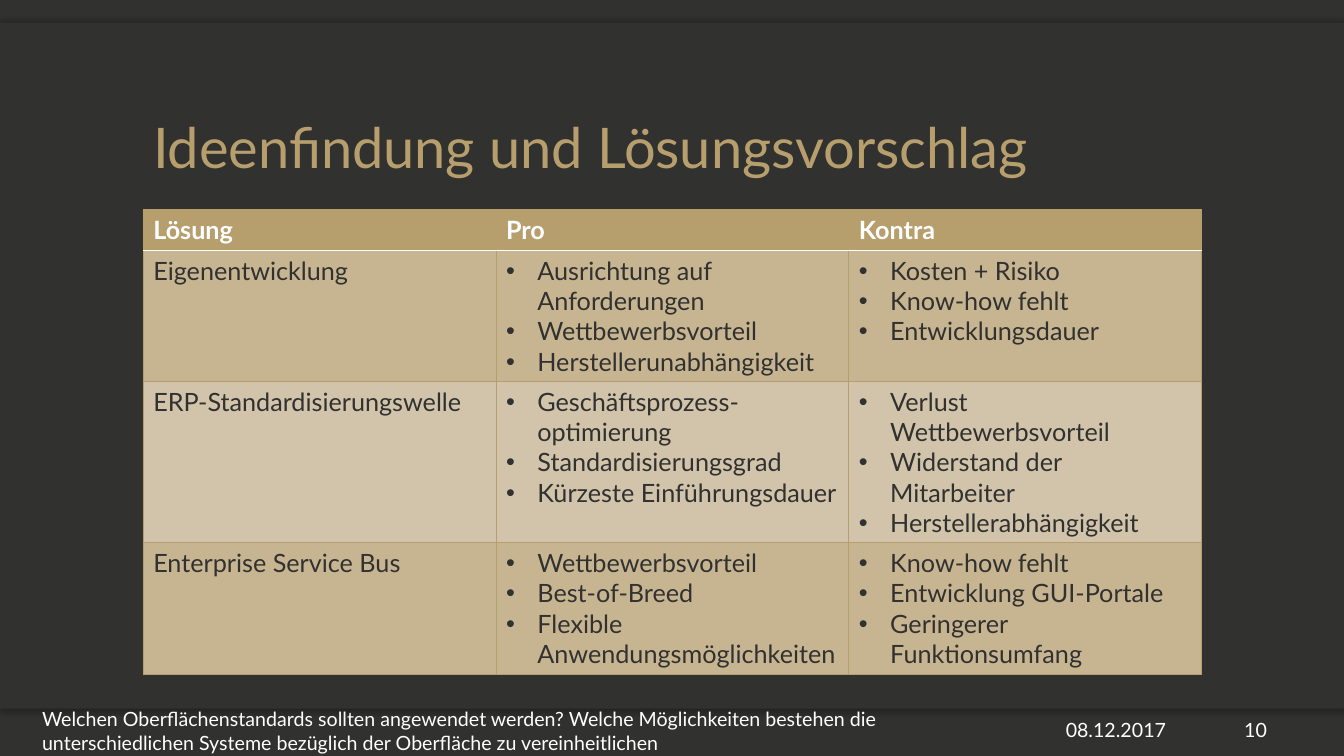
import dataclasses

import lxml.etree
import pptx
import pptx.dml.color
import pptx.enum.shapes
import pptx.enum.text
import pptx.oxml
import pptx.oxml.ns
import pptx.util

Cm = pptx.util.Cm
Anchor = pptx.enum.text.MSO_ANCHOR
Align = pptx.enum.text.PP_ALIGN


@dataclasses.dataclass(frozen=True)
class Theme:
    font: str = "Lato"
    dark: str = "31312F"
    gold: str = "B79E6D"
    band: str = "C7B592"
    plain: str = "D1C4AA"
    white: str = "FFFFFF"
    shadow: str = "000000"
    title_size: int = 40
    table_size: int = 18
    footer_size: int = 14


def rgb(color):
    return pptx.dml.color.RGBColor.from_string(color)


def apply_format(target, values):
    for name, value in values.items():
        setattr(target, name, value)


class SlideBuilder:
    def __init__(self, slide, theme):
        self.slide = slide
        self.theme = theme

    def background(self, color):
        fill = self.slide.background.fill
        fill.solid()
        fill.fore_color.rgb = rgb(color)

    def panel(self, left, top, width, height, shadow_angle=None):
        shape = self.slide.shapes.add_shape(
            pptx.enum.shapes.MSO_SHAPE.RECTANGLE,
            Cm(left), Cm(top), Cm(width), Cm(height))
        shape.shadow.inherit = False
        shape.fill.solid()
        shape.fill.fore_color.rgb = rgb(self.theme.dark)
        shape.line.fill.background()
        if shadow_angle is not None:
            effects = shape._element.spPr.find(pptx.oxml.ns.qn("a:effectLst"))
            effects.append(pptx.oxml.parse_xml(
                f'<a:outerShdw {pptx.oxml.ns.nsdecls("a")} blurRad="{pptx.util.Pt(4)}" '
                f'dist="{pptx.util.Pt(2)}" dir="{shadow_angle * 60000}" rotWithShape="0">'
                f'<a:srgbClr val="{self.theme.shadow}"><a:alpha val="25000"/></a:srgbClr>'
                '</a:outerShdw>'))

    def add_run(self, paragraph, text, size, color, bold=False):
        run = paragraph.add_run()
        run.text = text
        apply_format(run.font, {"name": self.theme.font, "bold": bold,
                                "size": pptx.util.Pt(size)})
        run.font.color.rgb = rgb(color)

    def text(self, box, text, size, color, anchor=Anchor.MIDDLE, **paragraph_format):
        shape = self.slide.shapes.add_textbox(*(Cm(length) for length in box))
        apply_format(shape.text_frame, {"word_wrap": True, "vertical_anchor": anchor})
        paragraph = shape.text_frame.paragraphs[0]
        apply_format(paragraph, paragraph_format)
        self.add_run(paragraph, text, size, color)

    def bullet(self, paragraph):
        properties = paragraph._p.get_or_add_pPr()
        properties.set("marL", str(Cm(0.79)))
        properties.set("indent", str(-Cm(0.79)))
        for tag, name, value in (("a:buFont", "typeface", "Arial"), ("a:buChar", "char", "•")):
            lxml.etree.SubElement(properties, pptx.oxml.ns.qn(tag)).set(name, value)

    def borders(self, cell, row_index):
        properties = cell._tc.get_or_add_tcPr()
        white_side = {0: "B", 1: "T"}.get(row_index)
        for side in "LRTB":
            color, width = (self.theme.white, 1) if side == white_side else (self.theme.gold, 0.5)
            properties.append(pptx.oxml.parse_xml(
                f'<a:ln{side} {pptx.oxml.ns.nsdecls("a")} w="{pptx.util.Pt(width)}">'
                f'<a:solidFill><a:srgbClr val="{color}"/></a:solidFill></a:ln{side}>'))

    def table(self, left, top, column_width, row_heights, rows):
        columns = len(rows[0])
        table = self.slide.shapes.add_table(
            len(rows), columns, Cm(left), Cm(top),
            Cm(column_width * columns), Cm(sum(row_heights))).table
        for column in table.columns:
            column.width = Cm(column_width)
        for row_index, (row, height) in enumerate(zip(rows, row_heights)):
            table.rows[row_index].height = Cm(height)
            header = row_index == 0
            fill = self.theme.gold if header else (self.theme.plain, self.theme.band)[row_index % 2]
            color = self.theme.white if header else self.theme.dark
            for column_index, content in enumerate(row):
                cell = table.cell(row_index, column_index)
                self.borders(cell, row_index)
                cell.fill.solid()
                cell.fill.fore_color.rgb = rgb(fill)
                bulleted = isinstance(content, list)
                for index, line in enumerate(content if bulleted else [content]):
                    frame = cell.text_frame
                    paragraph = frame.add_paragraph() if index else frame.paragraphs[0]
                    if bulleted:
                        self.bullet(paragraph)
                    self.add_run(paragraph, line, self.theme.table_size, color, header)


SOLUTIONS = [
    ["Lösung", "Pro", "Kontra"],
    ["Eigenentwicklung",
     ["Ausrichtung auf Anforderungen", "Wettbewerbsvorteil", "Herstellerunabhängigkeit"],
     ["Kosten + Risiko", "Know-how fehlt", "Entwicklungsdauer"]],
    ["ERP-Standardisierungswelle",
     ["Geschäftsprozess-optimierung", "Standardisierungsgrad", "Kürzeste Einführungsdauer"],
     ["Verlust Wettbewerbsvorteil", "Widerstand der Mitarbeiter", "Herstellerabhängigkeit"]],
    ["Enterprise Service Bus",
     ["Wettbewerbsvorteil", "Best-of-Breed", "Flexible Anwendungsmöglichkeiten"],
     ["Know-how fehlt", "Entwicklung GUI-Portale", "Geringerer Funktionsumfang"]],
]
QUESTION = ("Welchen Oberflächenstandards sollten angewendet werden? Welche Möglichkeiten "
            "bestehen die unterschiedlichen Systeme bezüglich der Oberfläche zu vereinheitlichen")


def main():
    presentation = pptx.Presentation()
    presentation.slide_width = Cm(33.87)
    presentation.slide_height = Cm(19.05)
    theme = Theme()
    builder = SlideBuilder(presentation.slides.add_slide(presentation.slide_layouts[6]), theme)

    # Backdrop: two shadowed strips beneath the main panel
    builder.background(theme.dark)
    builder.panel(0, 16.61, 33.87, 1.24, shadow_angle=90)
    builder.panel(0, 0.58, 33.87, 1.24, shadow_angle=270)
    builder.panel(0, 0.58, 33.87, 17.27)

    # Title
    builder.text((3.61, 1.17, 26.67, 3.51), "Ideenfindung und Lösungsvorschlag",
                 theme.title_size, theme.gold, Anchor.BOTTOM, line_spacing=0.9)

    # Footer
    for box, text, alignment in (
            ((25.93, 18.01, 3.71, 0.76), "08.12.2017", Align.RIGHT),
            ((0.81, 17.78, 23.16, 1.27), QUESTION, Align.LEFT),
            ((30.28, 18.01, 1.9, 0.76), "10", Align.RIGHT)):
        builder.text(box, text, theme.footer_size, theme.white, alignment=alignment)

    # Comparison of solutions
    builder.table(3.61, 5.28, 8.89, (1.03, 3.3, 4.05, 3.3), SOLUTIONS)

    presentation.save("out.pptx")


if __name__ == "__main__":
    main()
